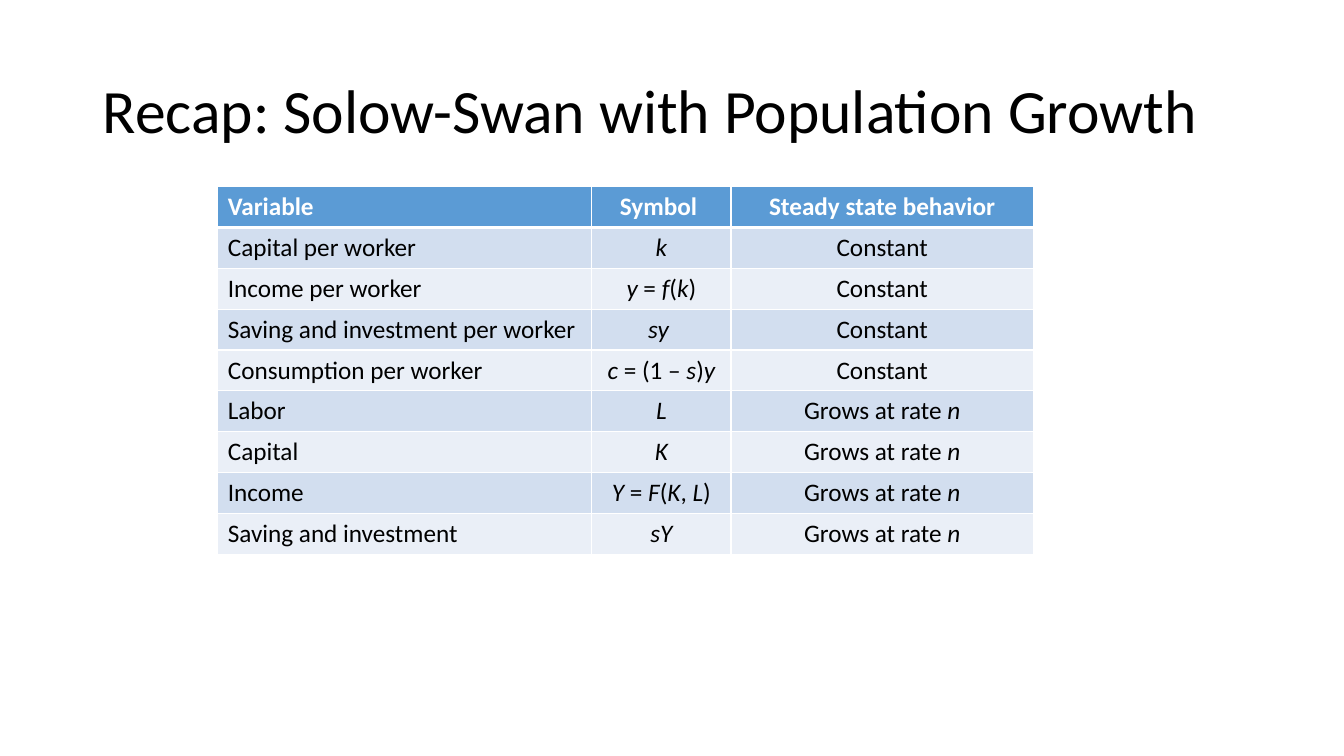
"""Build the Solow-Swan recap slide."""
from typing import NamedTuple

from lxml.etree import SubElement as Sub
from pptx import Presentation
from pptx.dml.color import RGBColor as Rgb
from pptx.enum.text import MSO_ANCHOR as Anchor, PP_ALIGN as Align
from pptx.oxml.ns import qn
from pptx.util import Inches, Pt

FONT = "Calibri"
WHITE, BLACK, BLUE = "FFFFFF", "000000", "5B9BD5"
BANDS = ("D2DEEF", "EAEFF7")


class Col(NamedTuple):
    head: str
    width: float
    align: Align


class Row(NamedTuple):
    name: str
    symbol: str
    trend: str


FLAT, GROWS = "Constant", "Grows at rate *n*"
COLS = [
    Col("Variable", 3.71, Align.LEFT),
    Col("Symbol ", 1.38, Align.CENTER),
    Col("Steady state behavior", 3, Align.CENTER),
]
ROWS = [
    Row("Capital per worker", "*k*", FLAT),
    Row("Income per worker", "*y* = *f*(*k*)", FLAT),
    Row("Saving and investment per worker", "*sy *", FLAT),
    Row("Consumption per worker", "*c *= (1 – *s*)*y*", FLAT),
    Row("Labor", "*L*", GROWS),
    Row("Capital", "*K*", GROWS),
    Row("Income", "*Y* = *F*(*K*, *L*)", GROWS),
    Row("Saving and investment", "*sY*", GROWS),
]


def color(code: str) -> Rgb:
    return Rgb.from_string(code)


def write(par, text: str, size: float, ink: str, bold: bool = False) -> None:
    """Add runs, setting the parts between asterisks in italics."""
    for i, part in enumerate(text.split("*")):
        if part:
            run = par.add_run()
            run.text = part
            font = run.font
            font.name, font.size = FONT, Pt(size)
            font.bold, font.italic = bold, i % 2 == 1
            font.color.rgb = color(ink)


def edge(cell, side: str, width: float) -> None:
    """Draw one white cell border."""
    line = Sub(cell._tc.get_or_add_tcPr(), qn(f"a:ln{side}"), w=str(Pt(width)))
    Sub(Sub(line, qn("a:solidFill")), qn("a:srgbClr"), val=WHITE)


def add_title(slide, text: str) -> None:
    """Add the heading."""
    box = slide.shapes.add_textbox(Inches(0.92), Inches(0.4), Inches(11.5), Inches(1.45))
    frame = box.text_frame
    frame.word_wrap = True
    frame.vertical_anchor = Anchor.MIDDLE
    par = frame.paragraphs[0]
    par.line_spacing = 0.9
    write(par, text, 44, BLACK)


def add_grid(slide, cols: list[Col], rows: list[Row]) -> None:
    """Add the table with its header and banded rows."""
    lines = [[col.head for col in cols], *rows]
    width = sum(col.width for col in cols)
    grid = slide.shapes.add_table(
        len(lines), len(cols), Inches(2.16), Inches(1.85), Inches(width), Inches(3.65)
    ).table
    for c, col in enumerate(cols):
        grid.columns[c].width = Inches(col.width)
        for r, line in enumerate(lines):
            cell = grid.cell(r, c)
            head = r == 0
            for side in "LRTB":
                thick = (r, side) in ((0, "B"), (1, "T"))
                edge(cell, side, 3 if thick else 1)
            cell.fill.solid()
            cell.fill.fore_color.rgb = color(BLUE if head else BANDS[(r - 1) % 2])
            par = cell.text_frame.paragraphs[0]
            par.alignment = col.align
            write(par, line[c], 18, WHITE if head else BLACK, head)


def main() -> None:
    deck = Presentation()
    deck.slide_width, deck.slide_height = Inches(13.33), Inches(7.5)
    slide = deck.slides.add_slide(deck.slide_layouts[6])
    add_title(slide, "Recap: Solow-Swan with Population Growth")
    add_grid(slide, COLS, ROWS)
    deck.save("out.pptx")


if __name__ == "__main__":
    main()
